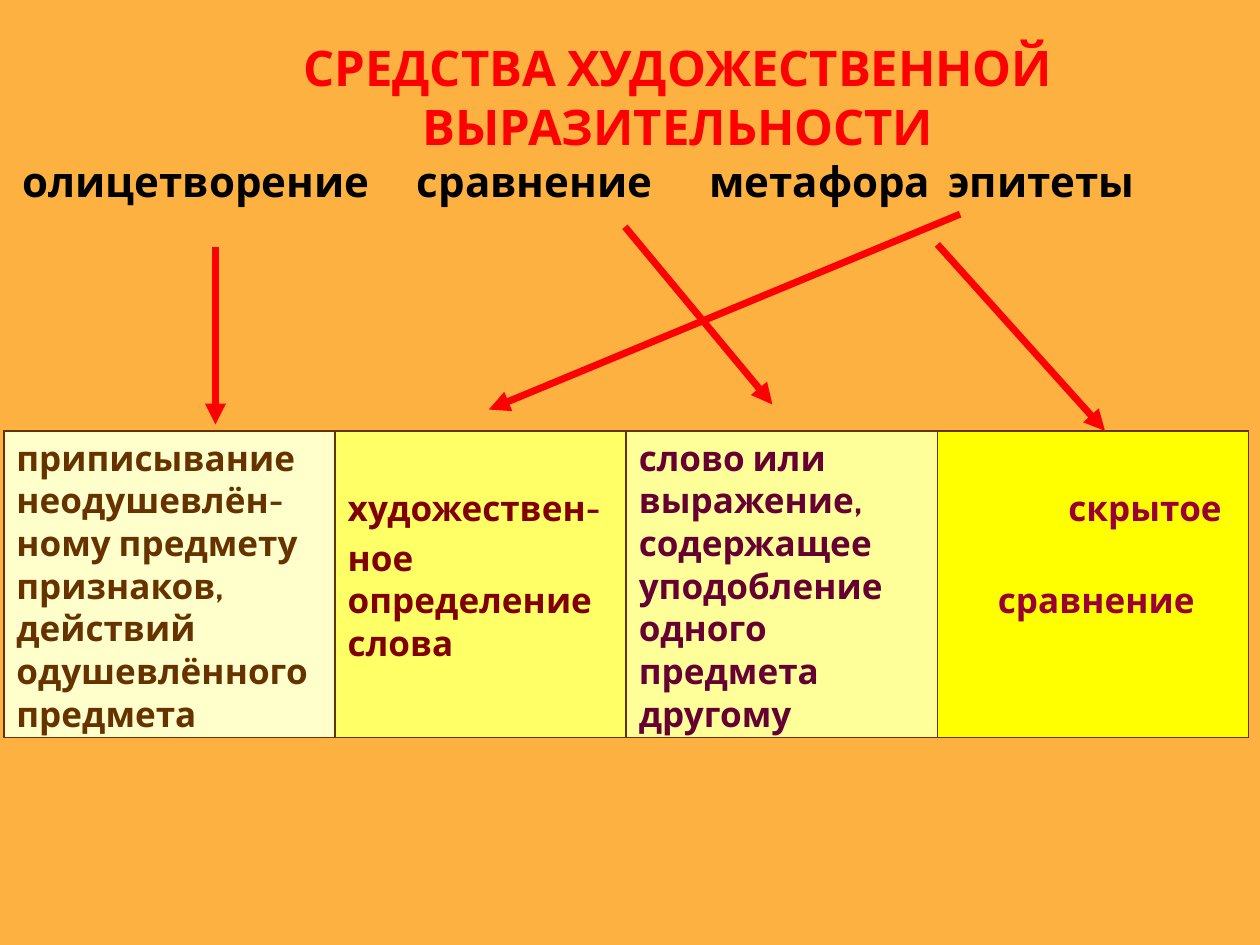
from lxml.etree import SubElement
from pptx import Presentation
from pptx.dml.color import RGBColor as RGB
from pptx.enum.shapes import MSO_CONNECTOR
from pptx.enum.text import PP_ALIGN as ALIGN
from pptx.oxml.ns import qn
from pptx.util import Inches, Pt

ORANGE = RGB(0xFC, 0xB1, 0x40)
RED = RGB(0xFF, 0x00, 0x00)
BLACK = RGB(0x00, 0x00, 0x00)
BROWN = RGB(0x66, 0x33, 0x00)
MAROON = RGB(0x80, 0x00, 0x00)
PLUM = RGB(0x66, 0x00, 0x33)
CRIMSON = RGB(0x99, 0x00, 0x33)
CREAM = RGB(0xFF, 0xFF, 0xCC)
LEMON = RGB(0xFF, 0xFF, 0x66)
PALE_YELLOW = RGB(0xFF, 0xFF, 0x99)
YELLOW = RGB(0xFF, 0xFF, 0x00)

HEADING = "СРЕДСТВА ХУДОЖЕСТВЕННОЙ ВЫРАЗИТЕЛЬНОСТИ"
TERMS = ["олицетворение", "сравнение", "метафора", "эпитеты"]
TERM_STOPS = [3.13, 5.45, 7.35]
DEFINITIONS = [
    dict(width=2.63, fill=CREAM, color=BROWN, top=0.05, lines=[
        ("приписывание неодушевлён-ному предмету признаков, действий одушевлённого предмета", 0, 0)]),
    dict(width=2.31, fill=LEMON, color=MAROON, top=0.45, lines=[
        ("художествен-", 0, 0), ("ное определение слова", 0, 4)]),
    dict(width=2.47, fill=PALE_YELLOW, color=PLUM, top=0.05, lines=[
        ("слово или выражение, содержащее уподобление одного предмета другому", 0, 0)]),
    dict(width=2.47, fill=YELLOW, color=CRIMSON, top=0.45, lines=[
        ("скрытое", 0.94, 0), ("сравнение", 0.38, 28)]),
]
ARROWS = [
    (1.71, 1.96, 1.71, 3.37),
    (7.44, 1.94, 8.77, 3.42),
    (4.96, 1.80, 6.13, 3.21),
    (7.62, 1.70, 3.88, 3.25),
]
TABLE_LEFT, TABLE_TOP, TABLE_HEIGHT = 0.03, 3.42, 2.43


def write(frame, text, size, color, align=ALIGN.LEFT, indent=0, before=0, spacing=None, stops=()):
    frame.word_wrap = True
    paragraph = frame.paragraphs[0]
    if paragraph.runs:
        paragraph = frame.add_paragraph()
    properties = paragraph._p.get_or_add_pPr()
    if indent:
        properties.set("marL", str(Inches(indent)))
    if stops:
        tabs = SubElement(properties, qn("a:tabLst"))
        for stop in stops:
            SubElement(tabs, qn("a:tab"), pos=str(Inches(stop)), algn="l")
    paragraph.alignment = align
    if before:
        paragraph.space_before = Pt(before)
    if spacing:
        paragraph.line_spacing = spacing
    run = paragraph.add_run()
    run.text = text
    run.font.name = "Cabin"
    run.font.size = Pt(size)
    run.font.bold = True
    run.font.color.rgb = color


def add_border(cell):
    properties = cell._tc.get_or_add_tcPr()
    for side in ("lnL", "lnR", "lnT", "lnB"):
        line = SubElement(properties, qn(f"a:{side}"), w=str(Pt(1)))
        paint = SubElement(line, qn("a:solidFill"))
        SubElement(paint, qn("a:srgbClr"), val=str(BROWN))


def add_arrow(shapes, ends):
    arrow = shapes.add_connector(MSO_CONNECTOR.STRAIGHT, *map(Inches, ends))
    arrow.line.color.rgb = RED
    arrow.line.width = Pt(4)
    SubElement(arrow.line._get_or_add_ln(), qn("a:tailEnd"), type="triangle")
    SubElement(arrow._element.spPr, qn("a:effectLst"))


def add_definitions(shapes):
    width = sum(column["width"] for column in DEFINITIONS)
    table = shapes.add_table(1, len(DEFINITIONS), Inches(TABLE_LEFT), Inches(TABLE_TOP),
                             Inches(width), Inches(TABLE_HEIGHT)).table
    for index, definition in enumerate(DEFINITIONS):
        table.columns[index].width = Inches(definition["width"])
        cell = table.cell(0, index)
        add_border(cell)
        cell.fill.solid()
        cell.fill.fore_color.rgb = definition["fill"]
        cell.margin_top = Inches(definition["top"])
        for text, indent, before in definition["lines"]:
            write(cell.text_frame, text, 20, definition["color"], indent=indent, before=before)


def main():
    deck = Presentation()
    deck.slide_width, deck.slide_height = Inches(10), Inches(7.5)
    slide = deck.slides.add_slide(deck.slide_layouts[6])
    slide.background.fill.solid()
    slide.background.fill.fore_color.rgb = ORANGE
    shapes = slide.shapes

    heading = shapes.add_textbox(*map(Inches, (1.17, 0.25, 8.42, 1.04)))
    write(heading.text_frame, HEADING, 28, RED, align=ALIGN.CENTER)
    terms = shapes.add_textbox(*map(Inches, (0.08, 1.26, 9.75, 0.42)))
    write(terms.text_frame, "\t".join(TERMS), 24, BLACK, spacing=0.8, stops=TERM_STOPS)

    add_definitions(shapes)
    for ends in ARROWS:
        add_arrow(shapes, ends)
    deck.save("out.pptx")


if __name__ == "__main__":
    main()
